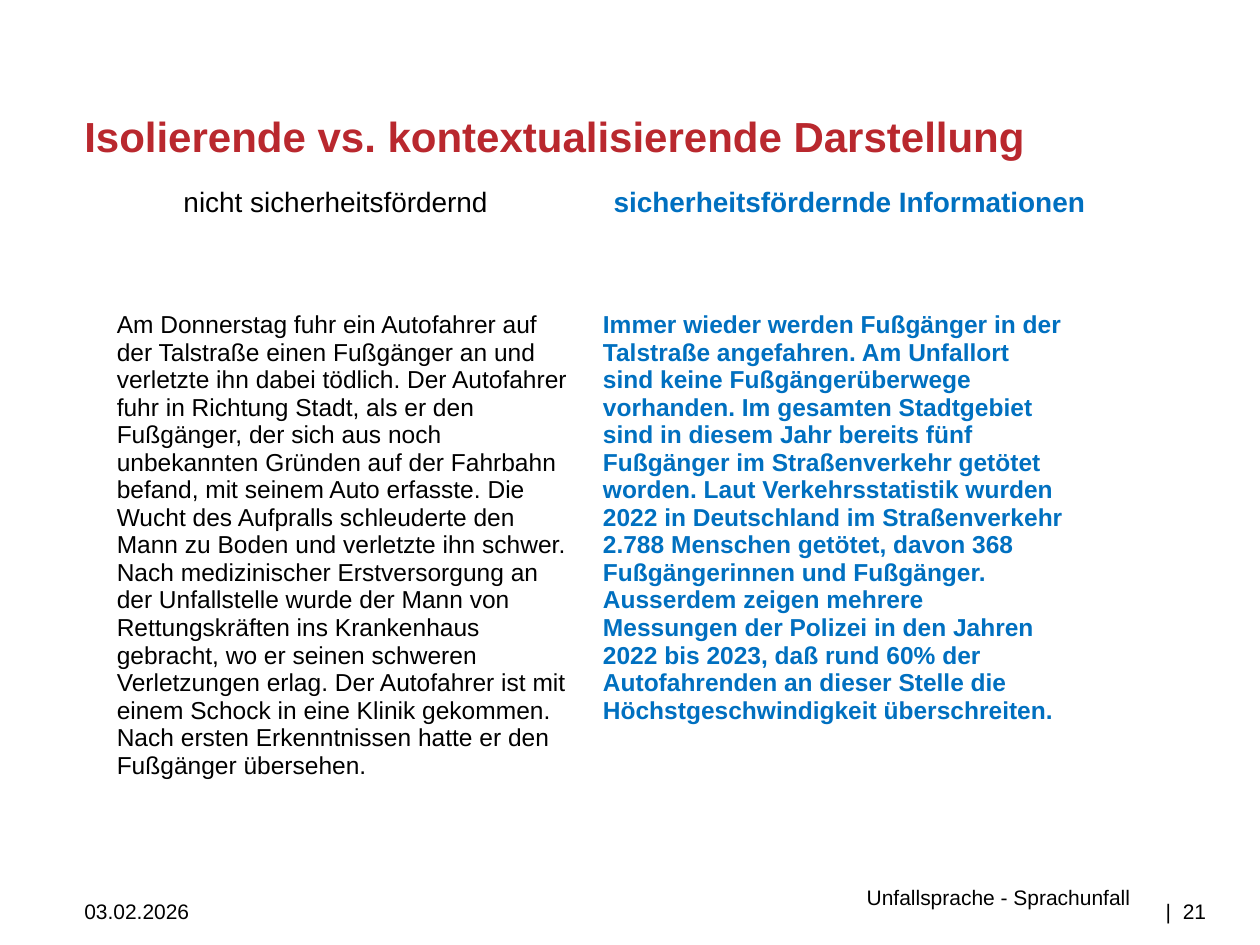
from lxml import etree
from pptx import Presentation
from pptx.dml.color import RGBColor
from pptx.enum.text import MSO_ANCHOR, PP_ALIGN
from pptx.oxml.ns import qn
from pptx.util import Cm, Pt

LEFT, RIGHT = PP_ALIGN.LEFT, PP_ALIGN.RIGHT
TOP, MIDDLE = MSO_ANCHOR.TOP, MSO_ANCHOR.MIDDLE
BLACK, RED, BLUE, WHITE = "000000", "B9282E", "0070C0", "FFFFFF"
MARGIN, WIDTH = 1.7, 22.6

ISOLATED = [
    "Am Donnerstag fuhr ein Autofahrer auf der Talstraße einen Fußgänger an und "
    "verletzte ihn dabei tödlich. Der Autofahrer fuhr in Richtung Stadt, als er den "
    "Fußgänger, der sich aus noch unbekannten Gründen auf der Fahrbahn befand, mit "
    "seinem Auto erfasste. Die Wucht des Aufpralls schleuderte den Mann zu Boden und "
    "verletzte ihn schwer.",
    "Nach medizinischer Erstversorgung an der Unfallstelle wurde der Mann von "
    "Rettungskräften ins Krankenhaus gebracht, wo er seinen schweren Verletzungen "
    "erlag. Der Autofahrer ist mit einem Schock in eine Klinik gekommen. Nach ersten "
    "Erkenntnissen hatte er den Fußgänger übersehen.",
]
CONTEXT = [
    "Immer wieder werden Fußgänger in der Talstraße angefahren. Am Unfallort sind "
    "keine Fußgängerüberwege vorhanden. Im gesamten Stadtgebiet sind in diesem Jahr "
    "bereits fünf Fußgänger im Straßenverkehr getötet worden. Laut Verkehrsstatistik "
    "wurden 2022 in Deutschland im Straßenverkehr 2.788 Menschen getötet, davon 368 "
    "Fußgängerinnen und Fußgänger. Ausserdem zeigen mehrere Messungen der Polizei in "
    "den Jahren 2022 bis 2023, daß rund 60% der Autofahrenden an dieser Stelle die "
    "Höchstgeschwindigkeit überschreiten.",
]


def rgb(value):
    return RGBColor.from_string(value)


class SlideBuilder:
    """Holds the text style and the current slide."""

    font = "Arial"

    def __init__(self, slide):
        self.slide = slide

    def run(self, p, text, size, color=BLACK, bold=False):
        r = p.add_run()
        r.text = text
        r.font.name = self.font
        r.font.size = Pt(size)
        r.font.bold = bold
        r.font.color.rgb = rgb(color)

    def frame(self, sp, inset_top=0, anchor=TOP):
        tf = sp.text_frame
        tf.word_wrap = True
        tf.margin_left = tf.margin_right = tf.margin_bottom = 0
        tf.margin_top = Cm(inset_top)
        tf.vertical_anchor = anchor
        return tf.paragraphs[0]

    def title(self, text, x, y, w, h):
        sp = self.slide.shapes.title
        sp.left, sp.top, sp.width, sp.height = Cm(x), Cm(y), Cm(w), Cm(h)
        p = self.frame(sp, anchor=MIDDLE)
        p.alignment = LEFT
        self.run(p, text, 24, RED, True)

    def text(self, x, y, w, h, inset_top=0, align=LEFT):
        sp = self.slide.shapes.add_textbox(Cm(x), Cm(y), Cm(w), Cm(h))
        p = self.frame(sp, inset_top)
        p.alignment = align
        return p

    def tabs(self, p, *stops):
        tabs = etree.SubElement(p._p.get_or_add_pPr(), qn("a:tabLst"))
        for stop in stops:
            etree.SubElement(tabs, qn("a:tab"), pos=str(Cm(stop)), algn="l")

    def footer(self, text, x, y, w, align=LEFT):
        self.run(self.text(x, y, w, 1.02, 0.08, align), text, 12)

    def border(self, cell, bottom):
        tc_pr = cell._tc.get_or_add_tcPr()
        for i, (side, width) in enumerate(zip("LRTB", (1, 1, 1, bottom))):
            ln = etree.Element(qn(f"a:ln{side}"), w=str(Pt(width)))
            fill = etree.SubElement(ln, qn("a:solidFill"))
            etree.SubElement(fill, qn("a:srgbClr"), val=WHITE)
            tc_pr.insert(i, ln)

    def table(self, x, y, widths, heights, columns):
        table = self.slide.shapes.add_table(
            len(heights), len(widths), Cm(x), Cm(y), Cm(sum(widths)), Cm(sum(heights))
        ).table
        table.first_row = table.horz_banding = False
        for row, height in zip(table.rows, heights):
            row.height = Cm(height)
        for col, width in zip(table.columns, widths):
            col.width = Cm(width)
        for cell in table.iter_cells():
            cell.fill.background()
        for c, (paragraphs, color, bold) in enumerate(columns):
            self.border(table.cell(0, c), 3)
            self.border(table.cell(1, c), 1)
            tf = table.cell(1, c).text_frame
            for i, text in enumerate(paragraphs):
                p = tf.add_paragraph() if i else tf.paragraphs[0]
                self.run(p, text, 14, color, bold)


def main():
    prs = Presentation()
    prs.slide_width, prs.slide_height = Cm(25.4), Cm(19.05)
    s = SlideBuilder(prs.slides.add_slide(prs.slide_layouts[5]))

    s.title("Isolierende vs. kontextualisierende Darstellung", MARGIN, 2.13, WIDTH, 1.2)
    p = s.text(MARGIN, 3.73, WIDTH, 1)
    s.tabs(p, 2, 10.67)
    s.run(p, "\tnicht sicherheitsfördernd\t", 16)
    s.run(p, "sicherheitsfördernde Informationen", 16, BLUE, True)
    s.table(2.1, 5.13, [9.8, 9.8], [1.02, 10.92],
            [(ISOLATED, BLACK, False), (CONTEXT, BLUE, True)])
    s.footer("03.02.2026", MARGIN, 18.03, 5.5)
    s.footer("Unfallsprache - Sprachunfall", 7.29, 17.75, 15.5, RIGHT)
    s.footer("|  21", 23.5, 18.03, 1.9)
    prs.save("out.pptx")


if __name__ == "__main__":
    main()
